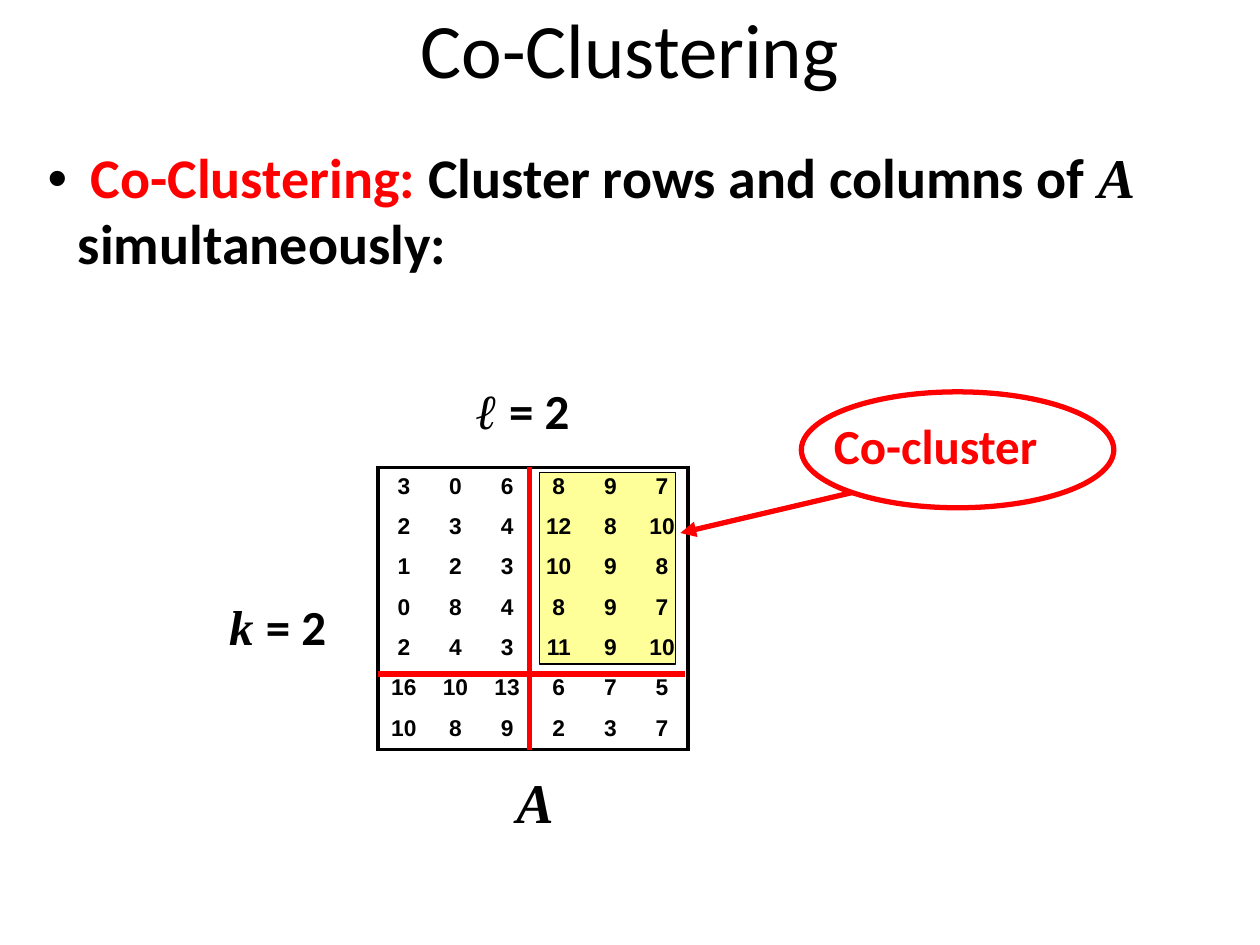
"""Build the co-clustering slide: a partitioned matrix with one co-cluster marked."""
from dataclasses import dataclass

from lxml import etree
from pptx import Presentation
from pptx import util as u
from pptx.dml.color import RGBColor
from pptx.enum import shapes, text
from pptx.oxml.ns import qn


@dataclass(frozen=True)
class Theme:
    black: str = "000000"
    red: str = "FF0000"
    yellow: str = "FFFF99"
    white: str = "FFFFFF"
    sans: str = "Calibri"
    serif: str = "Times New Roman"
    table_font: str = "Arial"
    title_size: int = 44
    body_size: int = 32
    label_size: int = 28
    cell_size: int = 13
    thin: float = 0.75
    frame: float = 2.25
    thick: float = 3
    spacing: float = 0.98


THEME = Theme()
NO_GRID_STYLE = "{2D5ABB26-0587-4C30-8999-92F81FD0307C}"
LEFT, TOP, COLUMN, ROW = 3, 3.71, 0.41, 0.32
MATRIX = [
    [3, 0, 6, 8, 9, 7],
    [2, 3, 4, 12, 8, 10],
    [1, 2, 3, 10, 9, 8],
    [0, 8, 4, 8, 9, 7],
    [2, 4, 3, 11, 9, 10],
    [16, 10, 13, 6, 7, 5],
    [10, 8, 9, 2, 3, 7],
]


def inches(*lengths):
    return [u.Inches(length) for length in lengths]


def add_run(paragraph, words, size, color=THEME.black, font=THEME.sans, bold=True, italic=False):
    run = paragraph.add_run()
    run.text = words
    run.font.size = u.Pt(size)
    run.font.name = font
    run.font.bold = bold
    run.font.italic = italic
    run.font.color.rgb = RGBColor.from_string(color)


def add_symbol(paragraph, words, size):
    add_run(paragraph, words, size, font=THEME.serif, italic=True)


def style_line(line, color, width):
    line.color.rgb = RGBColor.from_string(color)
    line.width = u.Pt(width)


def add_title(slide, words):
    title = slide.shapes.title
    title.left, title.top, title.width, title.height = inches(0.5, 0, 9, 0.93)
    title.text_frame.vertical_anchor = text.MSO_ANCHOR.TOP
    paragraph = title.text_frame.paragraphs[0]
    paragraph.alignment = text.PP_ALIGN.CENTER
    paragraph.line_spacing = THEME.spacing
    add_run(paragraph, words, THEME.title_size, bold=False)


def add_text(slide, box, wrap=False):
    frame = slide.shapes.add_textbox(*inches(*box)).text_frame
    frame.word_wrap = wrap
    paragraph = frame.paragraphs[0]
    paragraph.line_spacing = THEME.spacing
    return paragraph


def add_bullet(paragraph, indent):
    properties = paragraph._p.get_or_add_pPr()
    properties.set("marL", str(u.Inches(indent)))
    properties.set("indent", str(-u.Inches(indent)))
    color = etree.SubElement(properties, qn("a:buClr"))
    etree.SubElement(color, qn("a:srgbClr"), val=THEME.black)
    etree.SubElement(properties, qn("a:buFont"), typeface="Arial")
    etree.SubElement(properties, qn("a:buChar"), char="•")


def add_shape(slide, kind, box, fill=None, line=None, width=THEME.thin):
    shape = slide.shapes.add_shape(kind, *inches(*box))
    shape.shadow.inherit = False
    if fill:
        shape.fill.solid()
        shape.fill.fore_color.rgb = RGBColor.from_string(fill)
    else:
        shape.fill.background()
    if line:
        style_line(shape.line, line, width)
    else:
        shape.line.fill.background()
    return shape


def add_line(slide, start, end, arrow=False):
    connector = slide.shapes.add_connector(
        shapes.MSO_CONNECTOR.STRAIGHT, *inches(*start, *end))
    style_line(connector.line, THEME.red, THEME.thick)
    if arrow:
        etree.SubElement(connector.line._get_or_add_ln(), qn("a:tailEnd"), type="triangle")
    etree.SubElement(connector._element.spPr, qn("a:effectLst"))


def add_border(cell, side):
    line = etree.SubElement(cell._tc.get_or_add_tcPr(), qn(f"a:ln{side}"),
                            w=str(u.Pt(THEME.frame)))
    fill = etree.SubElement(line, qn("a:solidFill"))
    etree.SubElement(fill, qn("a:srgbClr"), val=THEME.black)


def fill_cell(cell, value, sides):
    cell.margin_left = cell.margin_right = u.Inches(0.05)
    cell.margin_top = cell.margin_bottom = u.Inches(0.05)
    for side in sides:
        add_border(cell, side)
    cell.fill.background()
    paragraph = cell.text_frame.paragraphs[0]
    paragraph.alignment = text.PP_ALIGN.CENTER
    add_run(paragraph, str(value), THEME.cell_size, font=THEME.table_font)


def add_matrix(slide, values):
    rows, columns = len(values), len(values[0])
    table = slide.shapes.add_table(
        rows, columns, *inches(LEFT, TOP, columns * COLUMN, rows * ROW)).table
    table.first_row = table.horz_banding = False
    table._tbl.tblPr.find(qn("a:tableStyleId")).text = NO_GRID_STYLE
    for row in table.rows:
        row.height = u.Inches(ROW)
    for i, numbers in enumerate(values):
        for j, number in enumerate(numbers):
            outer = {"L": j == 0, "R": j == columns - 1, "T": i == 0, "B": i == rows - 1}
            fill_cell(table.cell(i, j), number, [side for side in outer if outer[side]])


def main():
    presentation = Presentation()
    presentation.slide_width, presentation.slide_height = inches(10, 7.5)
    slide = presentation.slides.add_slide(presentation.slide_layouts[5])
    add_title(slide, "Co-Clustering")

    add_shape(slide, shapes.MSO_SHAPE.RECTANGLE, (4.28, 3.75, 1.08, 1.52),
              THEME.yellow, THEME.black)
    add_matrix(slide, MATRIX)

    name = add_shape(slide, shapes.MSO_SHAPE.RECTANGLE, (4, 6.07, 0.56, 0.63), THEME.white)
    name.text_frame.vertical_anchor = text.MSO_ANCHOR.TOP
    paragraph = name.text_frame.paragraphs[0]
    paragraph.alignment = text.PP_ALIGN.LEFT
    paragraph.line_spacing = THEME.spacing
    add_symbol(paragraph, "A", THEME.body_size)

    add_line(slide, (LEFT, 5.35), (5.44, 5.35))
    definition = add_text(slide, (0.28, 1.11, 9.52, 1.17), wrap=True)
    add_bullet(definition, 0.24)
    add_run(definition, " Co-Clustering: ", THEME.body_size, THEME.red)
    add_run(definition, "Cluster rows and columns of ", THEME.body_size)
    add_symbol(definition, "A ", THEME.body_size)
    add_run(definition, "simultaneously:", THEME.body_size)
    add_line(slide, (4.2, TOP), (4.2, 5.95))

    for symbol, box in (("k ", (1.72, 4.71, 0.98, 0.56)), ("ℓ ", (3.68, 2.99, 0.95, 0.56))):
        count = add_text(slide, box)
        add_symbol(count, symbol, THEME.label_size)
        add_run(count, "= 2", THEME.label_size)

    callout = add_text(slide, (6.52, 3.27, 2.13, 0.57))
    add_run(callout, "Co-cluster", THEME.label_size, THEME.red)
    add_shape(slide, shapes.MSO_SHAPE.OVAL, (6.36, 3.11, 2.48, 0.92),
              line=THEME.red, width=THEME.thick)
    add_line(slide, (6.76, 3.91), (5.4, 4.23), arrow=True)
    presentation.save("out.pptx")


if __name__ == "__main__":
    main()
